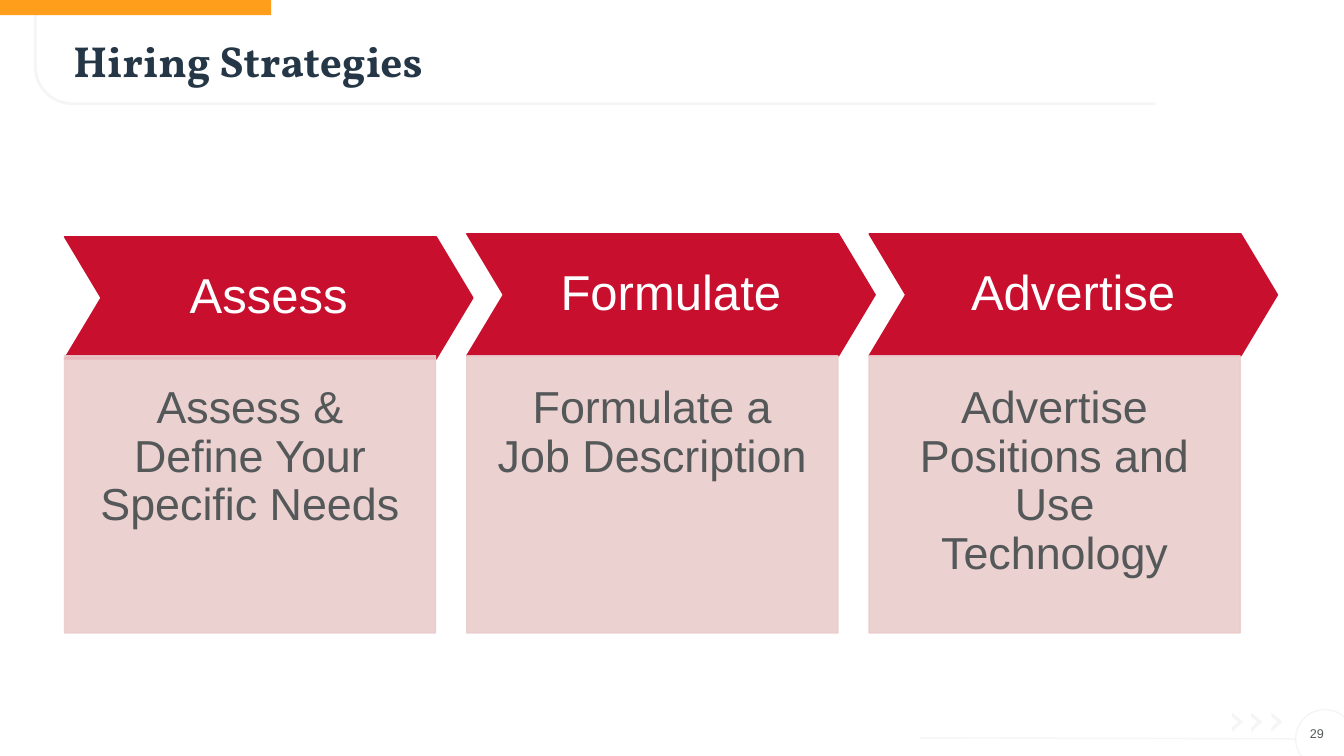
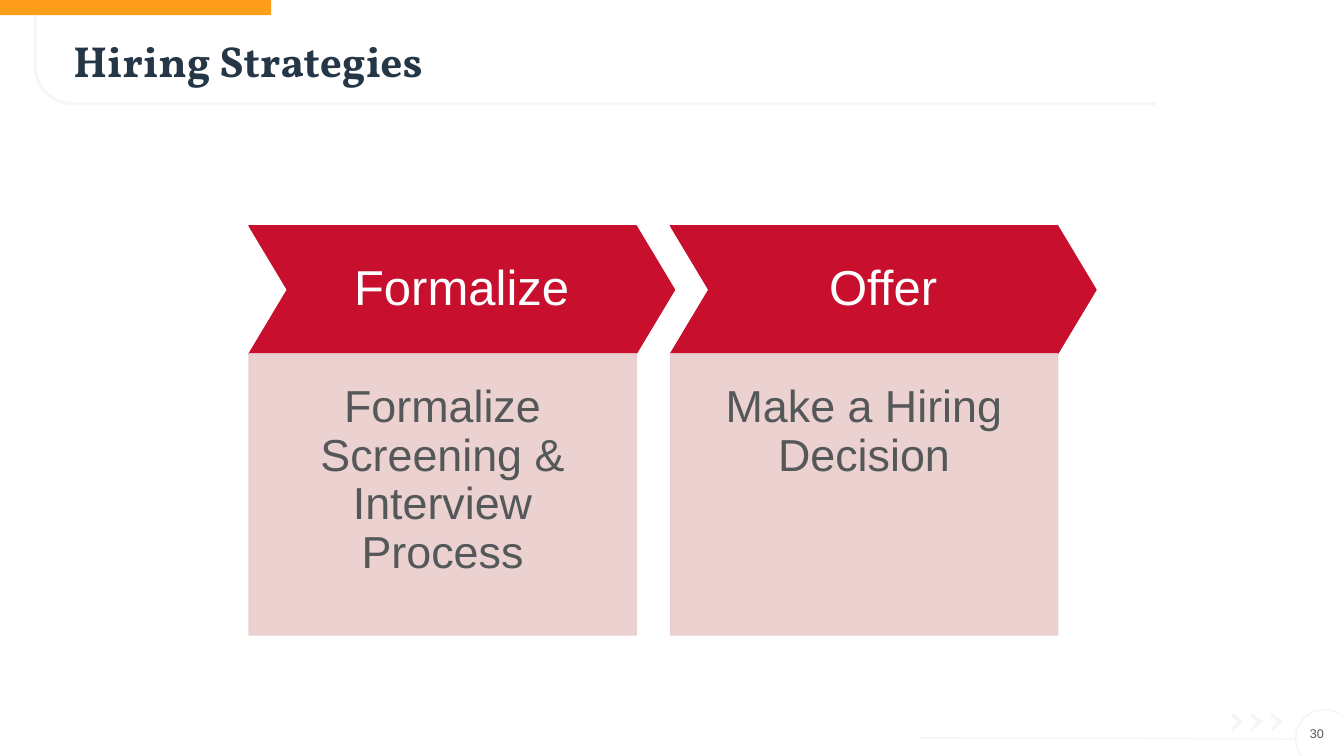
"""Build two hiring strategy slides made of chevron steps with descriptions."""
from dataclasses import dataclass
from math import cos, pi, sin

from lxml import etree
from pptx import Presentation
from pptx.dml.color import RGBColor
from pptx.enum import shapes, text
from pptx.oxml import ns
from pptx.util import Inches, Pt

NAVY = RGBColor(0x25, 0x37, 0x46)
RED = RGBColor(0xC8, 0x10, 0x2E)
PINK = RGBColor(0xEB, 0xCC, 0xCD)
GRAY = RGBColor(0x54, 0x58, 0x59)
PALE = RGBColor(0xF5, 0xF5, 0xF5)
ORANGE = RGBColor(0xFF, 0x9E, 0x1B)
WHITE = RGBColor(0xFF, 0xFF, 0xFF)

TITLE = "Hiring Strategies"
TITLE_FONT = "Vollkorn"
BODY_FONT = "Arial"
FIRST_NUMBER = 29


@dataclass
class StepRow:
    """Sizes shared by the steps of one slide, in inches."""
    left: float
    pitch: float
    chevron_width: float
    chevron_height: float
    body_top: float
    body_width: float
    body_height: float
    chevron_inset: float
    body_inset: float
    body_bottom_inset: float


THREE_STEPS = StepRow(0.64, 3.99, 4.05, 1.21, 3.53, 3.68, 2.75, 0.15, 0.29, 0.58)
TWO_STEPS = StepRow(2.47, 4.18, 4.22, 1.27, 3.51, 3.84, 2.79, 0.16, 0.3, 0.61)

SLIDES = [
    (THREE_STEPS, [
        ("Assess", "Assess & Define Your Specific Needs", 0.03),
        ("Formulate", "Formulate a Job Description", 0),
        ("Advertise", "Advertise Positions and Use Technology", 0),
    ]),
    (TWO_STEPS, [
        ("Formalize", "Formalize Screening & Interview Process", 0),
        ("Offer", "Make a Hiring Decision", 0),
    ]),
]


def paint(shape, fill=None, line=None, width=1):
    """Set the fill and outline of a shape and drop its shadow."""
    shape.shadow.inherit = False
    if fill is None:
        shape.fill.background()
    else:
        shape.fill.solid()
        shape.fill.fore_color.rgb = fill
    if line is None:
        shape.line.fill.background()
    else:
        shape.line.color.rgb = line
        shape.line.width = Pt(width)


def set_opacity(shape, percent):
    """Make the solid colours of a shape's fill and outline translucent."""
    for color in shape._element.spPr.iter(ns.qn("a:srgbClr")):
        etree.SubElement(color, ns.qn("a:alpha"), val=str(percent * 1000))


def add_preset(page, kind, left, top, width, height, **colors):
    """Add a painted preset shape."""
    shape = page.shapes.add_shape(
        kind, Inches(left), Inches(top), Inches(width), Inches(height))
    paint(shape, **colors)
    return shape


def add_outline(page, points, close, **colors):
    """Add a painted freeform through points given in inches."""
    corners = [(Inches(x), Inches(y)) for x, y in points]
    builder = page.shapes.build_freeform(*corners[0])
    builder.add_line_segments(corners[1:], close=close)
    paint(builder.convert_to_shape(), **colors)


def write(box, words, size, color, align, anchor, font=BODY_FONT,
          bold=False, spacing=None, insets=(0.1, 0.05, 0.1, 0.05)):
    """Put one formatted paragraph into a shape or text box."""
    frame = box.text_frame
    frame.word_wrap = True
    frame.vertical_anchor = anchor
    (frame.margin_left, frame.margin_top, frame.margin_right,
     frame.margin_bottom) = map(Inches, insets)
    para = frame.paragraphs[0]
    para.text = words
    para.alignment = align
    para.line_spacing = spacing
    para.font.name = font
    para.font.size = Pt(size)
    para.font.bold = bold
    para.font.color.rgb = color


def add_label(page, left, top, width, height, *args, **style):
    """Add a text box holding one formatted paragraph."""
    box = page.shapes.add_textbox(
        Inches(left), Inches(top), Inches(width), Inches(height))
    write(box, *args, **style)


def add_frame(page, number):
    """Draw the title, corner band, footer marks and slide number."""
    radius, steps = 0.37, 16
    angles = [pi / 2 * step / steps for step in range(steps + 1)]
    curve = [(0.72 - radius * cos(a), 0.66 + radius * sin(a)) for a in angles]
    add_outline(page, [(0.35, 0), *curve, (11.46, 1.03)], False,
                line=PALE, width=2)
    add_preset(page, shapes.MSO_SHAPE.OVAL, 12.85, 7.04, 0.58, 0.58, line=PALE)
    arrow = [(0, 0.04), (0.06, 0.09), (0, 0.15), (0, 0.19), (0.11, 0.09), (0, 0)]
    for left in (12.61, 12.41, 12.22):
        add_outline(page, [(left + x, 7.07 + y) for x, y in arrow], True, fill=PALE)
    add_preset(page, shapes.MSO_SHAPE.RECTANGLE, 0, 0, 2.69, 0.15, fill=ORANGE)
    rule = page.shapes.add_connector(
        shapes.MSO_CONNECTOR.STRAIGHT,
        Inches(9.12), Inches(7.32), Inches(12.85), Inches(7.33))
    rule.line.color.rgb = PALE
    rule.line.width = Pt(1)
    etree.SubElement(rule._element.spPr, ns.qn("a:effectLst"))
    add_label(page, 12.77, 7.08, 0.46, 0.4, str(number), 9, GRAY,
              text.PP_ALIGN.RIGHT, text.MSO_ANCHOR.MIDDLE)
    add_label(page, 0.63, 0.35, 9.83, 0.61, TITLE, 31, NAVY,
              text.PP_ALIGN.LEFT, text.MSO_ANCHOR.TOP,
              font=TITLE_FONT, bold=True, spacing=0.9)


def add_step(page, row, index, heading, description, drop):
    """Draw one chevron with its description panel below."""
    left = row.left + index * row.pitch
    chevron = add_preset(
        page, shapes.MSO_SHAPE.CHEVRON, left,
        row.body_top - row.chevron_height + drop,
        row.chevron_width, row.chevron_height, fill=RED, line=RED)
    chevron.adjustments[0] = 0.3
    write(chevron, heading, 35, WHITE, text.PP_ALIGN.CENTER,
          text.MSO_ANCHOR.MIDDLE, spacing=0.9, insets=[row.chevron_inset] * 4)
    panel = add_preset(page, shapes.MSO_SHAPE.RECTANGLE, left, row.body_top,
                       row.body_width, row.body_height, fill=PINK, line=PINK)
    set_opacity(panel, 90)
    write(panel, description, 32, GRAY, text.PP_ALIGN.CENTER,
          text.MSO_ANCHOR.TOP, spacing=0.9,
          insets=[row.body_inset] * 3 + [row.body_bottom_inset])


def main():
    """Build and save the presentation."""
    deck = Presentation()
    deck.slide_width, deck.slide_height = Inches(13.33), Inches(7.5)
    for number, (row, steps) in enumerate(SLIDES, FIRST_NUMBER):
        page = deck.slides.add_slide(deck.slide_layouts[6])
        add_frame(page, number)
        for index, step in enumerate(steps):
            add_step(page, row, index, *step)
    deck.save("out.pptx")


if __name__ == "__main__":
    main()
